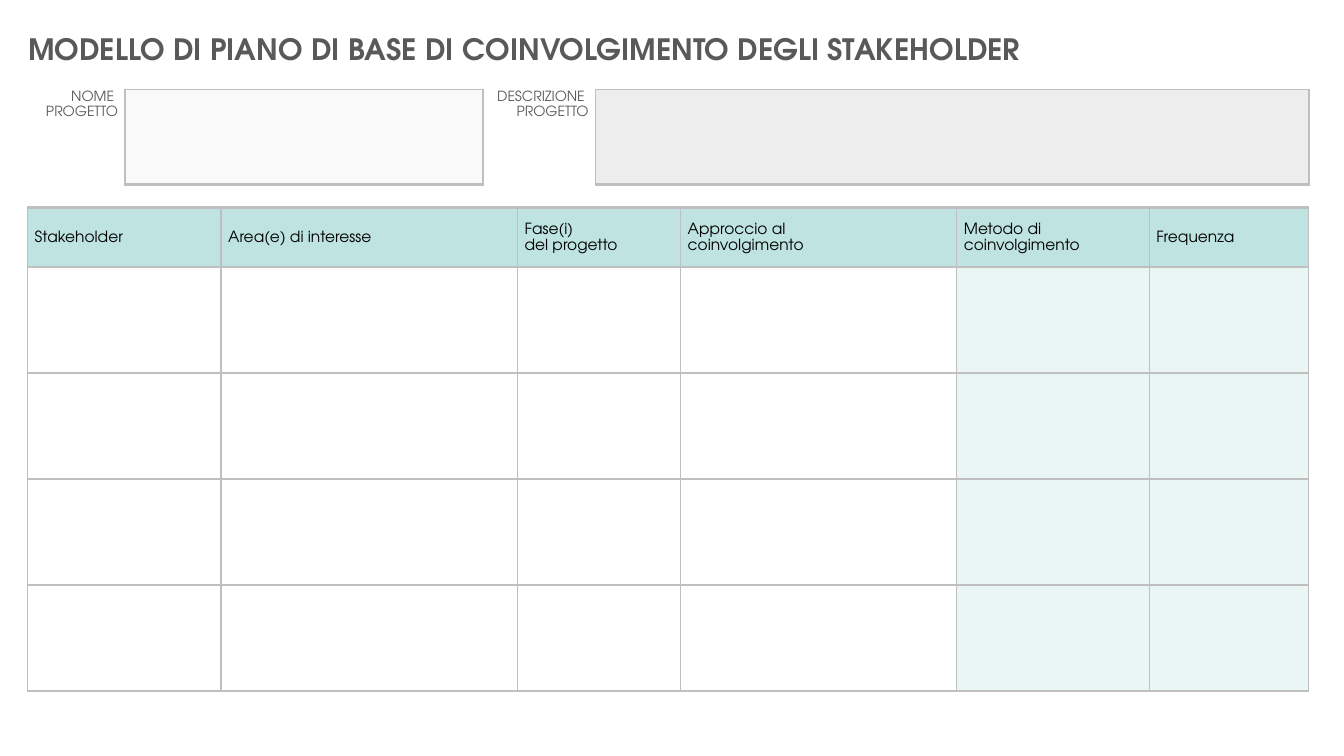
from copy import deepcopy
from lxml.etree import SubElement
from pptx import Presentation
from pptx.dml.color import RGBColor
from pptx.enum.text import MSO_ANCHOR, MSO_AUTO_SIZE, PP_ALIGN
from pptx.oxml.ns import qn
from pptx.util import Cm, Pt

FONT = "TeX Gyre Adventor"
COLORS = {
    "gray": "595959", "black": "000000", "line": "BFBFBF", "white": "FFFFFF",
    "pale": "F9F9F9", "silver": "EDEDED", "teal": "BEE3E0", "mint": "E9F6F4",
}
HEADS = ["Stakeholder", "Area(e) di interesse", "Fase(i) \ndel progetto",
         "Approccio al \ncoinvolgimento", "Metodo di coinvolgimento", "Frequenza"]
WIDTHS = [4.88, 7.47, 4.11, 6.96, 4.85, 4.01]
HEAD_HIGH, ROW_HIGH, ROWS = 1.5, 2.67, 4
MINT_FROM = 4


def write(frame, text, size=11, color="black", bold=False, align=PP_ALIGN.LEFT, space=None):
    para = frame.paragraphs[0]
    para.text = text
    para.alignment = align
    para.line_spacing = space
    for run in para.runs:
        font = run.font
        font.name, font.size, font.bold = FONT, Pt(size), bold
        font.color.rgb = RGBColor.from_string(COLORS[color])
    for gap in para._p.findall(qn("a:br")):
        gap.insert(0, deepcopy(para.runs[0]._r.rPr))


def style(cell, fill=None, **edges):
    """Fill a cell and draw its edges (L, R, T, B) in points; others stay bare."""
    props = cell._tc.get_or_add_tcPr()
    for side in "LRTB":
        width = edges.get(side, 0)
        line = SubElement(props, qn(f"a:ln{side}"), w=str(Pt(width)))
        if width:
            solid = SubElement(line, qn("a:solidFill"))
            SubElement(solid, qn("a:srgbClr"), val=COLORS["line"])
        else:
            SubElement(line, qn("a:noFill"))
    if fill:
        cell.fill.solid()
        cell.fill.fore_color.rgb = RGBColor.from_string(COLORS[fill])
    else:
        cell.fill.background()
    cell.margin_left = cell.margin_right = Cm(0.18)
    cell.margin_top = cell.margin_bottom = 0


def add_grid(slide, left, top, widths, heights):
    frame = slide.shapes.add_table(len(heights), len(widths), Cm(left), Cm(top),
                                   Cm(sum(widths)), Cm(sum(heights)))
    table = frame.table
    table.first_row = table.horz_banding = False
    for col, width in zip(table.columns, widths):
        col.width = Cm(width)
    for row, height in zip(table.rows, heights):
        row.height = Cm(height)
    return table


def add_title(slide, left, top, width, height):
    box = slide.shapes.add_textbox(Cm(left), Cm(top), Cm(width), Cm(height))
    box.text_frame.word_wrap = True
    box.text_frame.auto_size = MSO_AUTO_SIZE.SHAPE_TO_FIT_TEXT
    write(box.text_frame, "MODELLO DI PIANO DI BASE DI COINVOLGIMENTO DEGLI STAKEHOLDER",
          size=21, color="gray", bold=True)


def add_field(slide, left, top, widths, height, label, fill):
    """Place a label with an empty entry box to its right."""
    table = add_grid(slide, left, top, widths, [height])
    name, entry = table.cell(0, 0), table.cell(0, 1)
    style(name, R=1)
    write(name.text_frame, label, size=10, color="gray", align=PP_ALIGN.RIGHT, space=1.15)
    style(entry, fill, L=1, R=1, T=1, B=2.25)


def add_plan(slide, left, top):
    table = add_grid(slide, left, top, WIDTHS, [HEAD_HIGH] + [ROW_HIGH] * ROWS)
    for col, head in enumerate(HEADS):
        cell = table.cell(0, col)
        style(cell, "teal", L=1, R=1, T=3, B=1)
        cell.vertical_anchor = MSO_ANCHOR.MIDDLE
        write(cell.text_frame, head, space=1.15)
        for row in range(1, ROWS + 1):
            style(table.cell(row, col), "mint" if col >= MINT_FROM else "white",
                  L=1, R=1, T=1, B=1)


def main():
    deck = Presentation()
    deck.slide_width, deck.slide_height = Cm(33.87), Cm(19.05)
    slide = deck.slides.add_slide(deck.slide_layouts[6])
    add_title(slide, 0.46, 0.66, 31.19, 1.14)
    add_field(slide, 0.46, 2.26, [2.69, 9.02], 2.39, "NOME \nPROGETTO", "pale")
    add_field(slide, 12.17, 2.26, [2.84, 17.98], 2.39, "DESCRIZIONE \nPROGETTO", "silver")
    add_plan(slide, 0.69, 5.23)
    deck.save("out.pptx")


if __name__ == "__main__":
    main()
